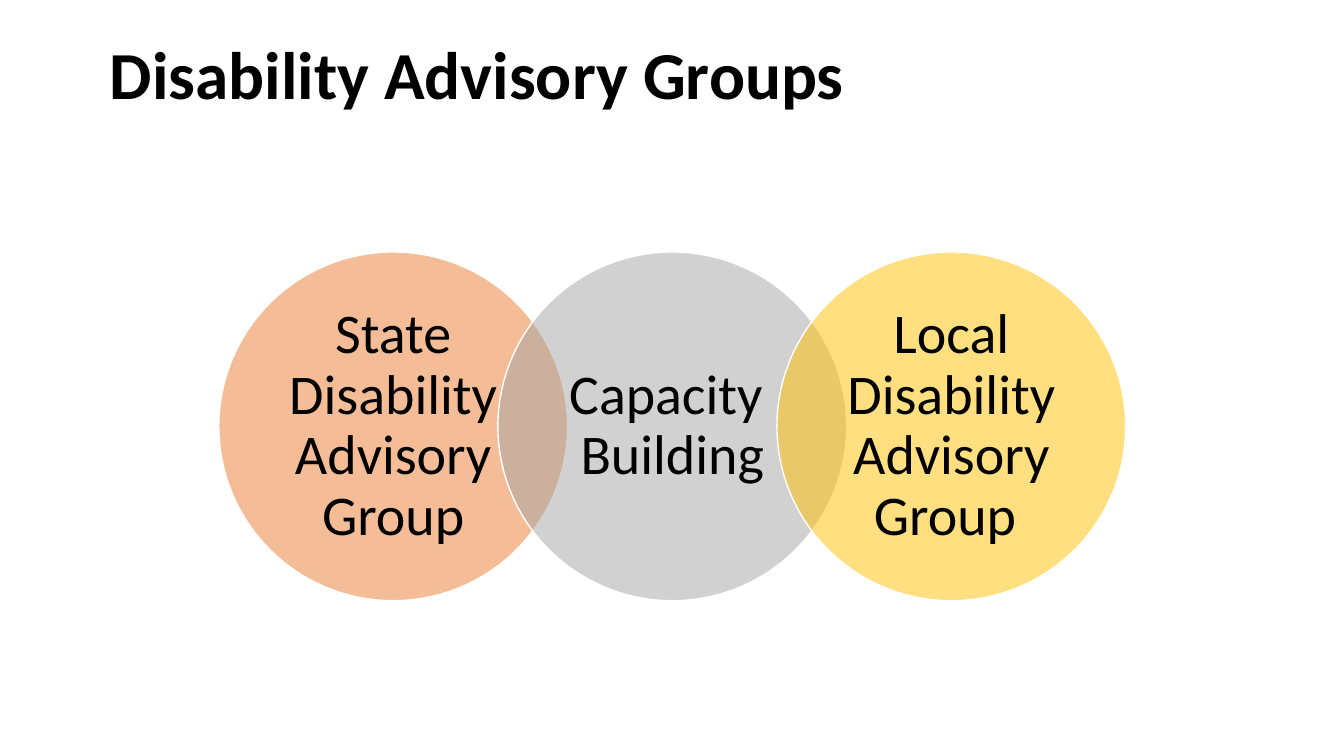
from lxml.etree import SubElement
from pptx import Presentation
from pptx.dml.color import RGBColor
from pptx.enum.shapes import MSO_SHAPE
from pptx.enum.text import MSO_ANCHOR, PP_ALIGN
from pptx.oxml.ns import qn
from pptx.util import Inches, Pt


def color(value):
    return RGBColor.from_string(value)


def write_text(shape, text, frame_format, paragraph_format, font_format):
    frame = shape.text_frame
    frame.text = text
    paragraph = frame.paragraphs[0]
    font = paragraph.runs[0].font
    font.color.rgb = color("000000")
    for target, values in (
        (frame, frame_format),
        (paragraph, paragraph_format),
        (font, font_format),
    ):
        for name, value in values.items():
            setattr(target, name, value)


presentation = Presentation()
presentation.slide_width = Inches(13.33)
presentation.slide_height = Inches(7.5)
slide = presentation.slides.add_slide(presentation.slide_layouts[5])

title = slide.shapes.title
title.left, title.top = Inches(0.99), Inches(0.41)
title.width, title.height = Inches(11.5), Inches(1.45)
write_text(
    title,
    "Disability Advisory Groups",
    {"vertical_anchor": MSO_ANCHOR.TOP, "margin_top": 0, "word_wrap": True},
    {"alignment": PP_ALIGN.LEFT, "line_spacing": 0.9},
    {"name": "Calibri", "size": Pt(48), "bold": True},
)

circle_frame = {
    "vertical_anchor": MSO_ANCHOR.MIDDLE,
    "word_wrap": True,
    "margin_left": Inches(0.19),
    "margin_right": Inches(0.19),
    "margin_top": Inches(0.06),
    "margin_bottom": Inches(0.06),
}
circle_paragraph = {"alignment": PP_ALIGN.CENTER, "line_spacing": 0.9}
circle_font = {"name": "Calibri", "size": Pt(40)}

diameter = 3.46
step = diameter * 0.8
circles = [
    ("State Disability Advisory Group", "ED7D31"),
    ("Capacity  Building", "A5A5A5"),
    ("Local Disability Advisory Group ", "FFC000"),
]

venn = slide.shapes.add_group_shape()
for index, (text, fill) in enumerate(circles):
    circle = venn.shapes.add_shape(
        MSO_SHAPE.OVAL,
        Inches(2.17 + index * step),
        Inches(2.5),
        Inches(diameter),
        Inches(diameter),
    )
    circle.shadow.inherit = False
    circle.fill.solid()
    circle.fill.fore_color.rgb = color(fill)
    fill_color = circle.fill._xPr.find(qn("a:solidFill"))[0]
    SubElement(fill_color, qn("a:alpha")).set("val", "50000")
    circle.line.color.rgb = color("FFFFFF")
    circle.line.width = Pt(1)
    write_text(circle, text, circle_frame, circle_paragraph, circle_font)

presentation.save("out.pptx")
